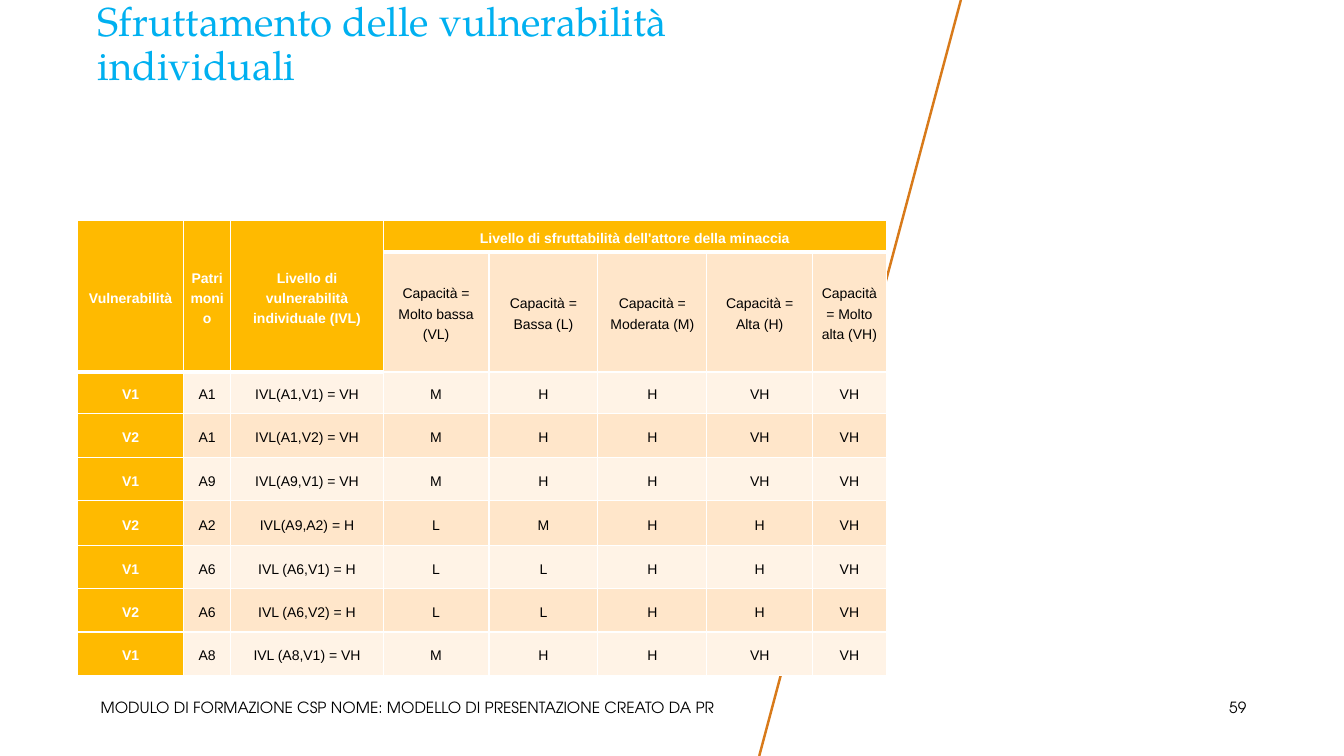
from lxml.etree import SubElement
from pptx import Presentation
from pptx.dml.color import RGBColor
from pptx.enum.shapes import MSO_CONNECTOR
from pptx.enum.text import MSO_ANCHOR, PP_ALIGN
from pptx.oxml.ns import qn
from pptx.util import Inches, Pt

COLORS = {
    "title": "00B0F0",
    "text": "000000",
    "white": "FFFFFF",
    "accent": "D87A1A",
    "heading": "FFBA00",
    "light": "FFF3E6",
    "dark": "FFE6CA",
}
COLUMN_WIDTHS = [1.05, 0.47, 1.51, 1.05, 1.08, 1.08, 1.05, 0.73]
ROW_HEIGHTS = [0.31, 1.19, 0.41, 0.44, 0.43, 0.44, 0.43, 0.43, 0.43]
LABEL_COLUMNS = 3
ROWS = [
    ["Vulnerabilità", "Patrimonio", "Livello di vulnerabilità individuale (IVL)",
     "Livello di sfruttabilità dell'attore della minaccia", "", "", "", ""],
    ["", "", "", "Capacità = Molto bassa (VL)", "Capacità = Bassa (L)",
     "Capacità = Moderata (M)", "Capacità = Alta (H)", "Capacità = Molto alta (VH)"],
    ["V1", "A1", "IVL(A1,V1) = VH", "M", "H", "H", "VH", "VH"],
    ["V2", "A1", "IVL(A1,V2) = VH", "M", "H", "H", "VH", "VH"],
    ["V1", "A9", "IVL(A9,V1) = VH", "M", "H", "H", "VH", "VH"],
    ["V2", "A2", "IVL(A9,A2) = H", "L", "M", "H", "H", "VH"],
    ["V1", "A6", "IVL (A6,V1) = H", "L", "L", "H", "H", "VH"],
    ["V2", "A6", "IVL (A6,V2) = H", "L", "L", "H", "H", "VH"],
    ["V1", "A8", "IVL (A8,V1) = VH", "M", "H", "H", "VH", "VH"],
]


def set_attributes(target, values):
    for name, value in values.items():
        setattr(target, name, value)


class SlideBuilder:
    def __init__(self, slide, colors):
        self.slide = slide
        self.colors = colors

    def color(self, name):
        return RGBColor.from_string(self.colors[name])

    def fill_paragraph(self, paragraph, text, color, font, layout):
        paragraph.text = text
        set_attributes(paragraph, layout)
        set_attributes(paragraph.font, font)
        paragraph.font.color.rgb = self.color(color)

    def add_text(self, box, text, color, font, layout, anchor=MSO_ANCHOR.TOP):
        shape = self.slide.shapes.add_textbox(*map(Inches, box))
        set_attributes(shape.text_frame, {"word_wrap": True, "vertical_anchor": anchor})
        self.fill_paragraph(shape.text_frame.paragraphs[0], text, color, font, layout)

    def add_line(self, start, end, color, width):
        connector = self.slide.shapes.add_connector(
            MSO_CONNECTOR.STRAIGHT, *map(Inches, start + end))
        connector.line.color.rgb = self.color(color)
        connector.line.width = Pt(width)
        SubElement(connector._element.spPr, qn("a:effectLst"))

    def add_borders(self, cell, widths):
        properties = cell._tc.get_or_add_tcPr()
        for side, width in widths.items():
            line = SubElement(properties, qn(f"a:ln{side}"), w=str(Pt(width)))
            fill = SubElement(line, qn("a:solidFill"))
            SubElement(fill, qn("a:srgbClr"), val=self.colors["white"])

    def add_cell(self, cell, text, row, column):
        heading_rows = 2 if column < LABEL_COLUMNS else 1
        in_heading = row < heading_rows
        emphasized = in_heading or column == 0
        band = "light" if row > 1 and row % 2 == 0 else "dark"
        self.add_borders(cell, {
            "L": 1, "R": 1,
            "T": 3 if row == heading_rows else 1,
            "B": 3 if in_heading else 1,
        })
        cell.fill.solid()
        cell.fill.fore_color.rgb = self.color("heading" if emphasized else band)
        set_attributes(cell, {
            "margin_left": Inches(0.07), "margin_right": Inches(0.07),
            "margin_top": 0, "margin_bottom": 0,
            "vertical_anchor": MSO_ANCHOR.MIDDLE,
        })
        self.fill_paragraph(cell.text_frame.paragraphs[0], text,
                            "white" if emphasized else "text",
                            {"name": "Arial", "size": Pt(10), "bold": emphasized},
                            {"alignment": PP_ALIGN.CENTER, "line_spacing": 1.3})

    def add_table(self, left, top, widths, heights, rows):
        box = map(Inches, (left, top, sum(widths), sum(heights)))
        table = self.slide.shapes.add_table(len(heights), len(widths), *box).table
        set_attributes(table, {"first_row": False, "horz_banding": False})
        for column, width in zip(table.columns, widths):
            column.width = Inches(width)
        for row, height in zip(table.rows, heights):
            row.height = Inches(height)
        for row, texts in enumerate(rows):
            for column, text in enumerate(texts):
                self.add_cell(table.cell(row, column), text, row, column)
        for column in range(LABEL_COLUMNS):
            table.cell(0, column).merge(table.cell(1, column))
        table.cell(0, LABEL_COLUMNS).merge(table.cell(0, len(widths) - 1))


def main():
    presentation = Presentation()
    presentation.slide_width = Inches(13.33)
    presentation.slide_height = Inches(7.5)
    slide = presentation.slides.add_slide(presentation.slide_layouts[6])
    builder = SlideBuilder(slide, COLORS)
    footer_font = {"name": "TeX Gyre Adventor", "size": Pt(11)}

    builder.add_line((7.53, 7.5), (9.53, 0), "accent", 1.75)
    builder.add_text((0.87, 0.35, 7.36, 0.58),
                     "Sfruttamento delle vulnerabilità individuali", "title",
                     {"name": "TeX Gyre Pagella", "size": Pt(28.8)},
                     {"line_spacing": 0.9}, MSO_ANCHOR.BOTTOM)
    builder.add_text((0.9, 6.88, 7.26, 0.4),
                     "MODULO DI FORMAZIONE CSP NOME: MODELLO DI PRESENTAZIONE CREATO DA PR",
                     "text", footer_font, {"alignment": PP_ALIGN.LEFT})
    builder.add_text((11.78, 6.88, 0.68, 0.4), "59", "text", footer_font,
                     {"alignment": PP_ALIGN.RIGHT})
    builder.add_table(0.77, 2.19, COLUMN_WIDTHS, ROW_HEIGHTS, ROWS)
    presentation.save("out.pptx")


if __name__ == "__main__":
    main()
